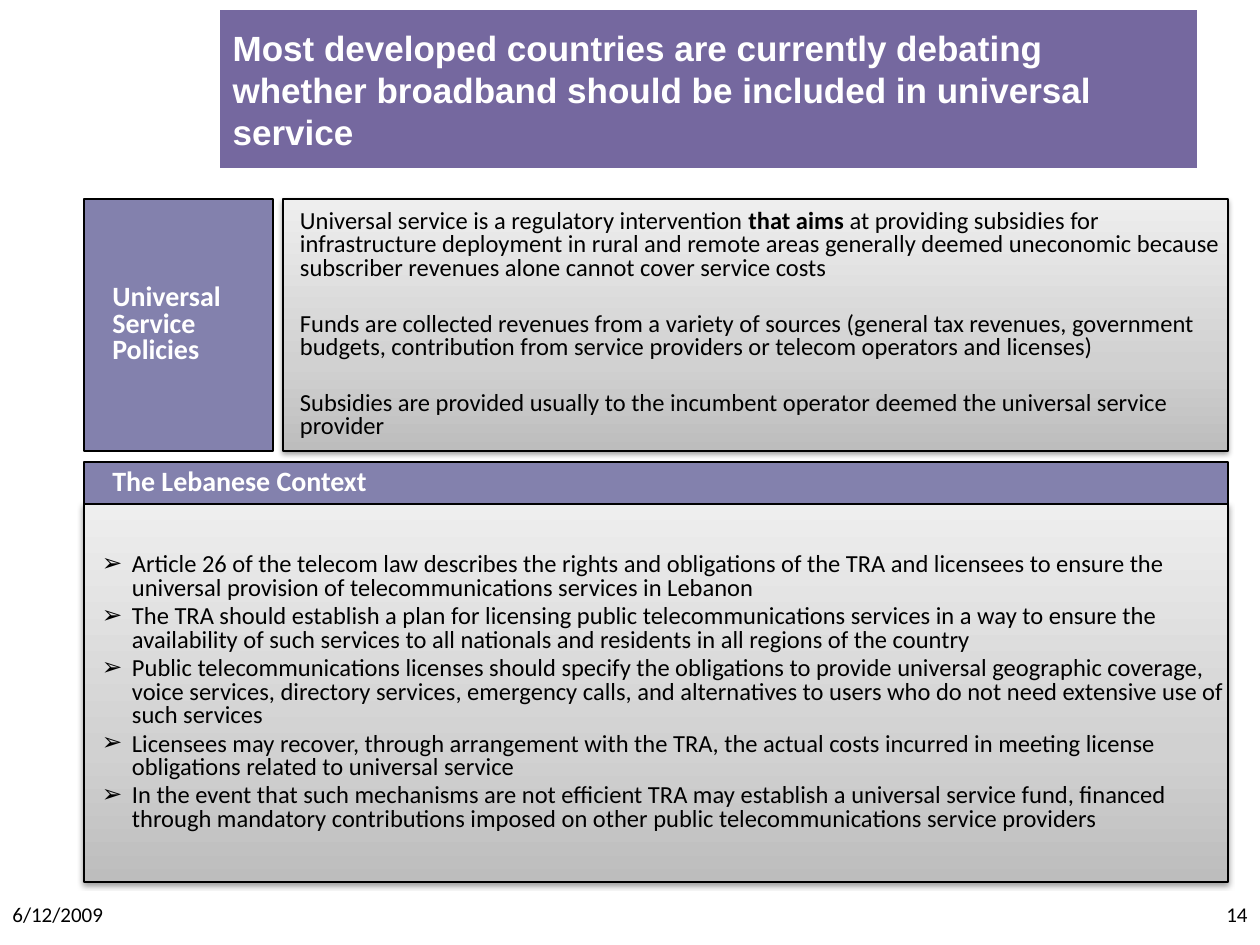
from copy import deepcopy

from lxml import etree
from pptx import Presentation
from pptx.dml.color import RGBColor
from pptx.enum.shapes import MSO_SHAPE
from pptx.enum.text import MSO_ANCHOR, MSO_AUTO_SIZE, PP_ALIGN
from pptx.oxml.ns import qn
from pptx.util import Pt

RECTANGLE = MSO_SHAPE.RECTANGLE
TOP, MIDDLE = MSO_ANCHOR.TOP, MSO_ANCHOR.MIDDLE
NO_AUTOFIT = MSO_AUTO_SIZE.NONE
LEFT, RIGHT = PP_ALIGN.LEFT, PP_ALIGN.RIGHT
EMU_PER_PX = 914400 / 126

COLORS = {
    "title": "75689F",
    "label": "8381AD",
    "white": "FFFFFF",
    "black": "000000",
    "panel_bottom": "BDBDBD",
    "panel_middle": "D1D1D1",
    "panel_top": "EEEEEE",
}
PANEL_STOPS = [(0, "panel_bottom"), (0.35, "panel_middle"), (1, "panel_top")]

TITLE = (
    "Most developed countries are currently debating whether broadband "
    "should be included in universal service"
)
POLICIES = [
    "Universal service is a regulatory intervention **that aims **at providing "
    "subsidies for infrastructure deployment in rural and remote areas generally "
    "deemed uneconomic because subscriber revenues alone cannot cover service costs",
    "Funds are collected revenues from a variety of sources (general tax revenues, "
    "government budgets, contribution from service providers or telecom operators "
    "and licenses)",
    "Subsidies are provided usually to the incumbent operator deemed the universal "
    "service provider",
]
CONTEXT = [
    "Article 26 of the telecom law describes the rights and obligations of the TRA "
    "and licensees to ensure the universal provision of telecommunications services "
    "in Lebanon",
    "The TRA should establish a plan for licensing public telecommunications services "
    "in a way to ensure the availability of such services to all nationals and "
    "residents in all regions of the country",
    "Public telecommunications licenses should specify the obligations to provide "
    "universal geographic coverage, voice services, directory services, emergency "
    "calls, and alternatives to users who do not need extensive use of such services",
    "Licensees may recover, through arrangement with the TRA, the actual costs "
    "incurred in meeting license obligations related to universal service",
    "In the event that such mechanisms are not efficient TRA may establish a universal "
    "service fund, financed through mandatory contributions imposed on other public "
    "telecommunications service providers",
]


def px(length):
    """Convert pixels to EMU."""
    return round(length * EMU_PER_PX)


def rgb(name):
    """Look up a named colour."""
    return RGBColor.from_string(COLORS[name])


def place(shape, box):
    """Move and size a shape to a pixel box."""
    shape.left, shape.top, shape.width, shape.height = map(px, box)


def write(shape, *texts, size, font="Calibri", color="black", bold=False, align=LEFT,
          anchor=MIDDLE, inset=None, margin=0, hanging=0, bullet=None, spacing=1.0, gap=0):
    """Write paragraphs with one format; ** marks toggle bold."""
    frame = shape.text_frame
    frame.word_wrap = True
    frame.auto_size = NO_AUTOFIT
    frame.vertical_anchor = anchor
    if inset is not None:
        frame.margin_left = frame.margin_right = px(inset)
        frame.margin_top = frame.margin_bottom = px(inset)
    for index, text in enumerate(texts):
        paragraph = frame.add_paragraph() if index else frame.paragraphs[0]
        properties = paragraph._p.get_or_add_pPr()
        properties.set("marL", str(px(margin)))
        properties.set("indent", str(px(-hanging)))
        if bullet:
            etree.SubElement(properties, qn("a:buChar"), char=bullet)
        paragraph.alignment = align
        paragraph.line_spacing = spacing
        paragraph.space_before = Pt(gap if index else 0)
        for part, words in enumerate(text.split("**")):
            run = paragraph.add_run()
            run.text = words
            run.font.name = font
            run.font.size = Pt(size)
            run.font.bold = bold or part % 2 == 1
            run.font.color.rgb = rgb(color)


def outline(shape):
    """Draw the thin black border."""
    shape.line.color.rgb = rgb("black")
    shape.line.width = Pt(0.75)


def style_panel(shape):
    """Give a panel its grey gradient, border and soft shadow."""
    shape.fill.gradient()
    shape.fill.gradient_angle = 90
    stop_list = shape._element.spPr.find(".//" + qn("a:gsLst"))
    stop_list.append(deepcopy(stop_list[0]))
    for stop, (position, color) in zip(shape.fill.gradient_stops, PANEL_STOPS):
        stop.position = position
        stop.color.rgb = rgb(color)
    outline(shape)
    shape.shadow.inherit = False
    effects = shape._element.spPr.find(qn("a:effectLst"))
    shadow = etree.SubElement(effects, qn("a:outerShdw"), blurRad=str(Pt(3.1)),
                              dist=str(Pt(1.6)), dir="5400000", rotWithShape="0")
    shade = etree.SubElement(shadow, qn("a:srgbClr"), val=COLORS["black"])
    etree.SubElement(shade, qn("a:alpha"), val="38000")


def add_rectangle(slide, box):
    """Add a rectangle without the theme shadow."""
    rectangle = slide.shapes.add_shape(RECTANGLE, *map(px, box))
    rectangle.shadow.inherit = False
    return rectangle


def add_label(slide, box, text):
    """Add a purple heading block."""
    label = add_rectangle(slide, box)
    label.fill.solid()
    label.fill.fore_color.rgb = rgb("label")
    outline(label)
    write(label, text, size=16, color="white", bold=True, margin=16, spacing=0.8)


def add_footer(slide, left, text, align):
    """Add a footer text at the bottom edge."""
    footer = slide.shapes.add_textbox(*map(px, (left, 895, 294, 50)))
    write(footer, text, size=12, align=align, anchor=TOP)


def main():
    """Build the universal service slide."""
    presentation = Presentation()
    presentation.slide_width, presentation.slide_height = px(1260), px(945)
    slide = presentation.slides.add_slide(presentation.slide_layouts[1])

    title = slide.shapes.title
    place(title, (220, 10, 977, 158))
    title.fill.solid()
    title.fill.fore_color.rgb = rgb("title")
    write(title, TITLE, size=20, font="Arial", color="white", bold=True)

    policies = add_rectangle(slide, (283, 199, 945, 252))
    style_panel(policies)
    write(policies, *POLICIES, size=14, inset=1, margin=16, spacing=0.8, gap=18.5)
    add_label(slide, (84, 199, 189, 252), "Universal Service Policies")

    context = slide.placeholders[1]
    place(context, (84, 504, 1144, 378))
    style_panel(context)
    write(context, *CONTEXT, size=14, inset=1, margin=47, hanging=30, bullet="➢",
          spacing=0.8, gap=2.8)
    add_label(slide, (84, 462, 1144, 42), "The Lebanese Context")

    add_footer(slide, 0, "6/12/2009", LEFT)
    add_footer(slide, 966, "14", RIGHT)
    presentation.save("out.pptx")


if __name__ == "__main__":
    main()
